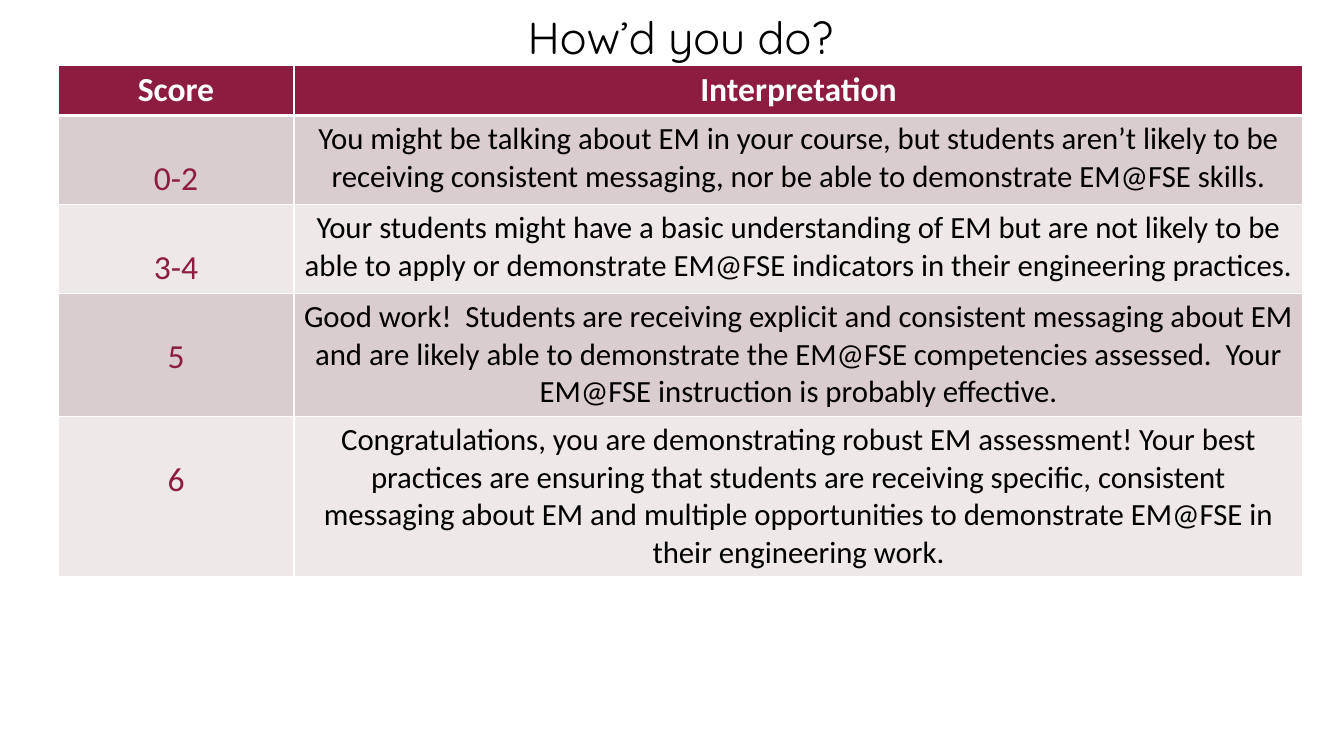
"""Build the slide that interprets the self-assessment scores."""
from dataclasses import dataclass

import lxml.etree
import pptx
import pptx.dml.color
import pptx.enum.text
import pptx.oxml.ns
import pptx.table
import pptx.text.text
import pptx.util

RGBColor = pptx.dml.color.RGBColor
MAROON = RGBColor(0x8C, 0x1D, 0x40)
DARK_BAND = RGBColor(0xDA, 0xCD, 0xCF)
LIGHT_BAND = RGBColor(0xEE, 0xE8, 0xE8)
BLACK = RGBColor(0, 0, 0)
WHITE = RGBColor(0xFF, 0xFF, 0xFF)

COLUMN_WIDTHS = (236, 1009)
HEADER_HEIGHT = 50
SCORE_TOP_MARGIN = 43


@dataclass(frozen=True)
class Band:
    """One score range with its meaning and row height in px."""

    score: str
    interpretation: str
    height: int


BANDS = (
    Band("0-2", "You might be talking about EM in your course, but students aren’t likely to be "
         "receiving consistent messaging, nor be able to demonstrate EM@FSE skills.", 89),
    Band("3-4", "Your students might have a basic understanding of EM but are not likely to be "
         "able to apply or demonstrate EM@FSE indicators in their engineering practices.", 89),
    Band("5", "Good work!  Students are receiving explicit and consistent messaging about EM "
         "and are likely able to demonstrate the EM@FSE competencies assessed.  "
         "Your EM@FSE instruction is probably effective.", 123),
    Band("6", "Congratulations, you are demonstrating robust EM assessment! Your best practices "
         "are ensuring that students are receiving specific, consistent messaging about EM and "
         "multiple opportunities to demonstrate EM@FSE in their engineering work.", 160),
)


def px(length: int) -> pptx.util.Emu:
    """Turn px into EMU at 100.8 px to the inch."""
    return pptx.util.Emu(round(length * 914400 / 100.8))


def write(frame: pptx.text.text.TextFrame, text: str, size: int, color: RGBColor,
          font: str = "Calibri", bold: bool = False) -> None:
    """Fill a text frame with one centred paragraph."""
    frame.text = text
    paragraph = frame.paragraphs[0]
    paragraph.alignment = pptx.enum.text.PP_ALIGN.CENTER
    paragraph.font.name = font
    paragraph.font.size = pptx.util.Pt(size)
    paragraph.font.bold = bold
    paragraph.font.color.rgb = color


def add_borders(cell: pptx.table._Cell, top: int = 1, bottom: int = 1) -> None:
    """Give a cell white borders, with widths in points."""
    properties = cell._tc.get_or_add_tcPr()
    qn = pptx.oxml.ns.qn
    for tag, width in (("a:lnL", 1), ("a:lnR", 1), ("a:lnT", top), ("a:lnB", bottom)):
        line = lxml.etree.SubElement(properties, qn(tag), w=str(pptx.util.Pt(width)))
        fill = lxml.etree.SubElement(line, qn("a:solidFill"))
        lxml.etree.SubElement(fill, qn("a:srgbClr"), val=str(WHITE))


def paint(cell: pptx.table._Cell, color: RGBColor) -> None:
    """Fill a cell with a solid colour."""
    cell.fill.solid()
    cell.fill.fore_color.rgb = color


def main() -> None:
    """Draw the title and the score table."""
    presentation = pptx.Presentation()
    presentation.slide_width, presentation.slide_height = px(1344), px(756)
    slide = presentation.slides.add_slide(presentation.slide_layouts[6])

    title = slide.shapes.add_textbox(px(101), px(10), px(1159), px(54)).text_frame
    title.word_wrap = True
    title.vertical_anchor = pptx.enum.text.MSO_ANCHOR.MIDDLE
    write(title, "How’d you do?", 32, BLACK, "Quicksand")

    heights = [HEADER_HEIGHT] + [band.height for band in BANDS]
    table = slide.shapes.add_table(len(heights), len(COLUMN_WIDTHS), px(58), px(65),
                                   px(sum(COLUMN_WIDTHS)), px(sum(heights))).table
    table.horz_banding = False
    for column, width in zip(table.columns, COLUMN_WIDTHS):
        column.width = px(width)
    for row, height in zip(table.rows, heights):
        row.height = px(height)

    for column, heading in enumerate(("Score", "Interpretation")):
        cell = table.cell(0, column)
        add_borders(cell, bottom=3)
        paint(cell, MAROON)
        write(cell.text_frame, heading, 24, WHITE, bold=True)

    for number, band in enumerate(BANDS, start=1):
        score, interpretation = table.cell(number, 0), table.cell(number, 1)
        for cell in (score, interpretation):
            add_borders(cell, top=3 if number == 1 else 1)
            paint(cell, DARK_BAND if number % 2 else LIGHT_BAND)
        score.margin_top = px(SCORE_TOP_MARGIN)
        write(score.text_frame, band.score, 24, MAROON)
        write(interpretation.text_frame, band.interpretation, 22, BLACK)

    presentation.save("out.pptx")


if __name__ == "__main__":
    main()
